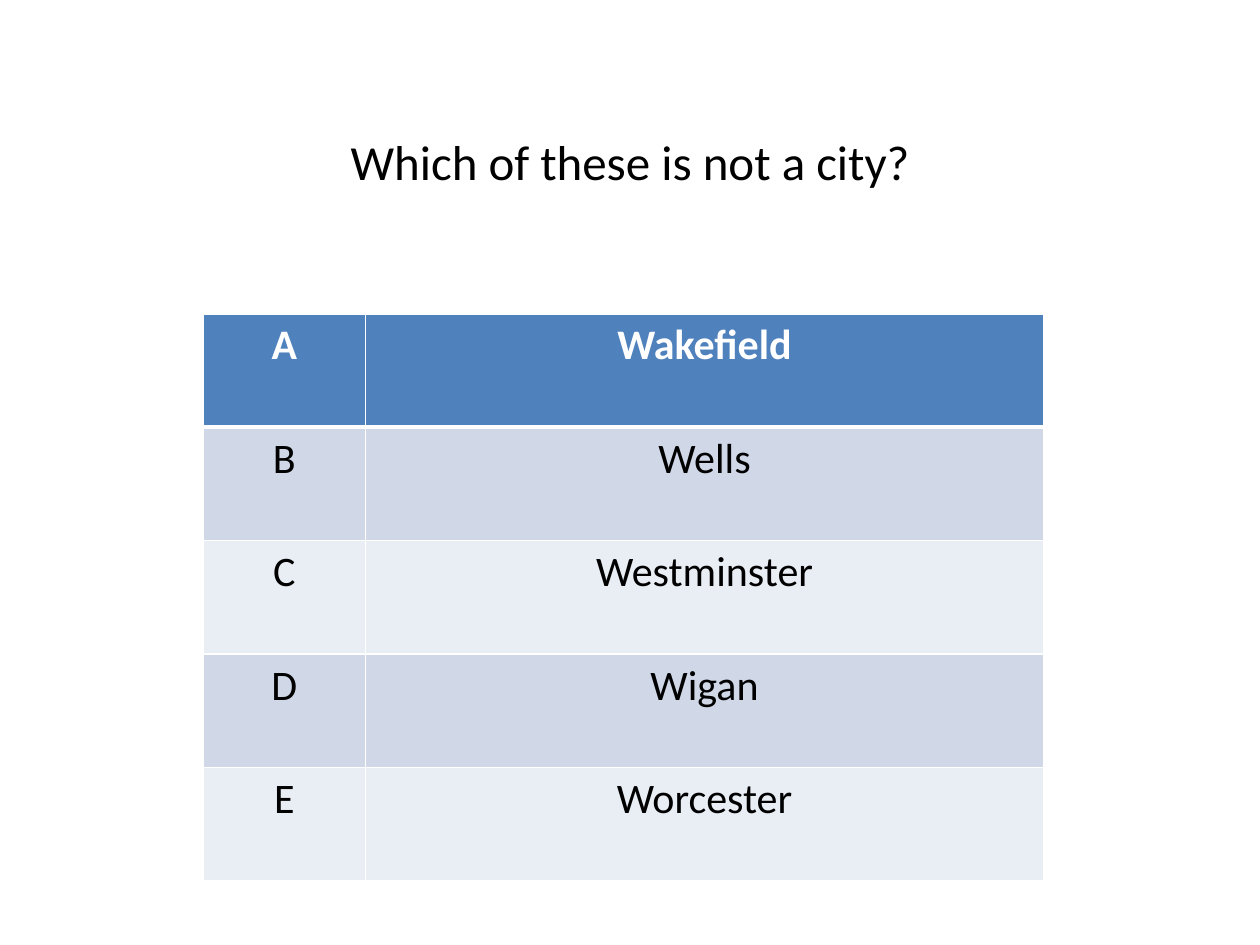
"""Build a quiz slide with a question and a table of five answers."""
from pptx import Presentation
from pptx.dml.color import RGBColor
from pptx.enum.text import MSO_ANCHOR as Anchor, PP_ALIGN as Align
from pptx.oxml import parse_xml
from pptx.oxml.ns import nsdecls
from pptx.util import Pt

QUESTION = "Which of these is not a city?"
ANSWERS = [
    ("A", "Wakefield"),
    ("B", "Wells"),
    ("C", "Westminster"),
    ("D", "Wigan"),
    ("E", "Worcester"),
]

FONT = "Calibri"
BLACK = RGBColor(0, 0, 0)
WHITE = RGBColor(255, 255, 255)
HEADER = RGBColor(0x4F, 0x81, 0xBD)
BANDS = [RGBColor(0xE9, 0xED, 0xF4), RGBColor(0xD0, 0xD8, 0xE8)]

TABLE_LEFT, TABLE_TOP = 116, 179.3
COLUMN_WIDTHS = [93, 387.3]
ROW_HEIGHT = 64.8


def write(frame, text, size, color=BLACK, bold=False):
    para = frame.paragraphs[0]
    para.alignment = Align.CENTER
    span = para.add_run()
    span.text = text
    font = span.font
    font.name, font.size, font.bold = FONT, Pt(size), bold
    font.color.rgb = color


def add_border(cell, side, width):
    cell._tc.get_or_add_tcPr().append(parse_xml(
        f'<a:ln{side} {nsdecls("a")} w="{Pt(width)}"><a:solidFill>'
        f'<a:srgbClr val="{WHITE}"/></a:solidFill></a:ln{side}>'))


def add_answers(page):
    table = page.shapes.add_table(
        len(ANSWERS), len(COLUMN_WIDTHS), Pt(TABLE_LEFT), Pt(TABLE_TOP),
        Pt(sum(COLUMN_WIDTHS)), Pt(ROW_HEIGHT * len(ANSWERS))).table
    for column, width in zip(table.columns, COLUMN_WIDTHS):
        column.width = Pt(width)
    for number, answer in enumerate(ANSWERS):
        table.rows[number].height = Pt(ROW_HEIGHT)
        is_header = number == 0
        for position, text in enumerate(answer):
            cell = table.cell(number, position)
            for side in "LRTB":
                header_edge = (number, side) in [(0, "B"), (1, "T")]
                add_border(cell, side, 3 if header_edge else 1)
            cell.fill.solid()
            cell.fill.fore_color.rgb = HEADER if is_header else BANDS[number % 2]
            write(cell.text_frame, text, 24, bold=is_header,
                  color=WHITE if is_header else BLACK)


def main():
    deck = Presentation()
    deck.slide_width, deck.slide_height = Pt(720), Pt(540)
    page = deck.slides.add_slide(deck.slide_layouts[5])
    add_answers(page)
    title = page.shapes.title
    title.left, title.top, title.width, title.height = map(Pt, (139, 71.3, 442, 41))
    title.text_frame.vertical_anchor = Anchor.TOP
    write(title.text_frame, QUESTION, 28)
    deck.save("out.pptx")


if __name__ == "__main__":
    main()
